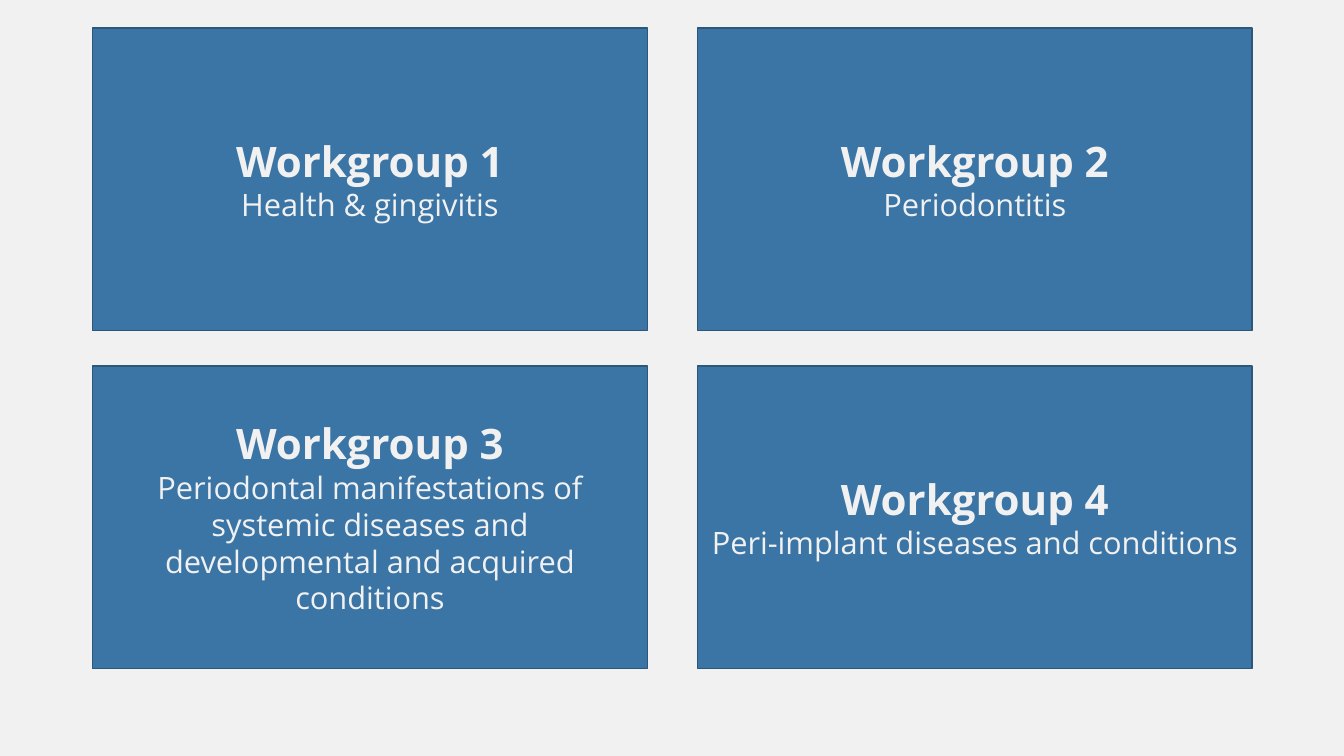
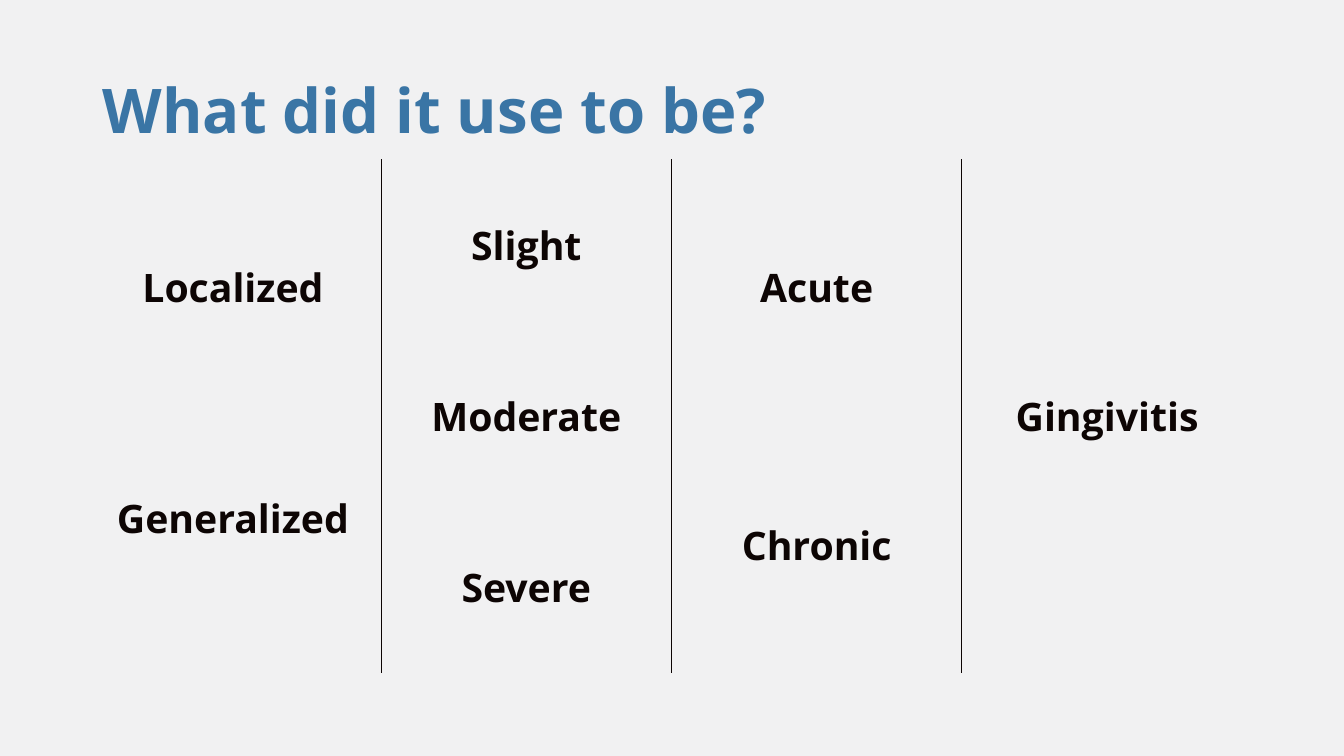
from lxml import etree
from pptx import Presentation
from pptx import util as u
from pptx.dml import color
from pptx.enum import shapes, text
from pptx.oxml import ns

COLOURS = {"paper": "F1F1F2", "blue": "3A75A5", "edge": "2B577A", "ink": "0D0504"}
FONT = "Open Sans"
WIDTH, HEIGHT = 13.33, 7.5
LEFT, CONTENT_WIDTH = 0.92, 11.5
NO_STYLE = "{2D5ABB26-0587-4C30-8999-92F81FD0307C}"

WORKGROUPS = [
    "Health & gingivitis",
    "Periodontitis",
    "Periodontal manifestations of systemic diseases and "
    "developmental and acquired conditions",
    "Peri-implant diseases and conditions",
]
TERM_COLUMNS = [
    [("Localized", 2), ("Generalized", 2)],
    [("Slight", 1), ("Moderate", 2), ("Severe", 1)],
    [("Acute", 2), ("Chronic", 2)],
    [("Gingivitis", 4)],
]


def rgb(name):
    return color.RGBColor.from_string(COLOURS[name])


def paint(fill, name):
    fill.solid()
    fill.fore_color.rgb = rgb(name)


def write(paragraph, content, size, colour, bold=True,
          align=text.PP_ALIGN.CENTER, spacing=None):
    paragraph.alignment = align
    if spacing:
        paragraph.line_spacing = spacing
    run = paragraph.add_run()
    run.text = content
    font = run.font
    font.name, font.size, font.bold = FONT, u.Pt(size), bold
    font.color.rgb = rgb(colour)


def add_card(slide, column, row, heading, detail):
    width, height = 5.5, 3
    column_gap, row_gap = 0.5, 0.35
    left = LEFT + column * (width + column_gap)
    top = 0.28 + row * (height + row_gap)
    shape = slide.shapes.add_shape(
        shapes.MSO_SHAPE.RECTANGLE,
        *map(u.Inches, (left, top, width, height)))
    shape.shadow.inherit = False
    paint(shape.fill, "blue")
    shape.line.color.rgb = rgb("edge")
    shape.line.width = u.Pt(1)
    frame = shape.text_frame
    frame.word_wrap = True
    frame.vertical_anchor = text.MSO_ANCHOR.MIDDLE
    write(frame.paragraphs[0], heading, 30, "paper")
    write(frame.add_paragraph(), detail, 22, "paper", bold=False)


def add_title(slide, content):
    title = slide.shapes.title
    title.left, title.top, title.width, title.height = map(
        u.Inches, (LEFT, 0.4, CONTENT_WIDTH, 1.45))
    title.text_frame.vertical_anchor = text.MSO_ANCHOR.MIDDLE
    write(title.text_frame.paragraphs[0], content, 44, "blue",
          align=text.PP_ALIGN.LEFT, spacing=0.9)


def add_border(cell, side):
    properties = cell._tc.get_or_add_tcPr()
    line = etree.SubElement(properties, ns.qn(f"a:ln{side}"), w=str(u.Pt(1)))
    fill = etree.SubElement(line, ns.qn("a:solidFill"))
    etree.SubElement(fill, ns.qn("a:srgbClr"), val=COLOURS["ink"])


def add_term_table(slide, columns):
    widths = [2.94] + [2.88] * 3
    heights = [1.7, 0.85, 0.85, 1.7]
    frame = slide.shapes.add_table(
        len(heights), len(widths),
        *map(u.Inches, (0.84, 1.58, sum(widths), sum(heights))))
    table = frame.table
    frame._element.find(".//" + ns.qn("a:tableStyleId")).text = NO_STYLE
    table.first_row = table.horz_banding = False
    for column, width in zip(table.columns, widths):
        column.width = u.Inches(width)
    for row, height in zip(table.rows, heights):
        row.height = u.Inches(height)

    last = len(widths) - 1
    for row in range(len(heights)):
        for column in range(len(widths)):
            cell = table.cell(row, column)
            if column > 0:
                add_border(cell, "L")
            if column < last:
                add_border(cell, "R")
            paint(cell.fill, "paper")
            cell.vertical_anchor = text.MSO_ANCHOR.MIDDLE

    for column, terms in enumerate(columns):
        row = 0
        for term, span in terms:
            cell = table.cell(row, column)
            if span > 1:
                cell.merge(table.cell(row + span - 1, column))
            write(cell.text_frame.paragraphs[0], term, 28, "ink")
            row += span
    table.cell(2, 0).margin_bottom = u.Inches(0.57)


def build_workgroups(presentation):
    slide = presentation.slides.add_slide(presentation.slide_layouts[6])
    for index, detail in enumerate(WORKGROUPS):
        row, column = divmod(index, 2)
        add_card(slide, column, row, f"Workgroup {index + 1}", detail)


def build_former_terms(presentation):
    slide = presentation.slides.add_slide(presentation.slide_layouts[5])
    add_title(slide, "What did it use to be?")
    add_term_table(slide, TERM_COLUMNS)


def main():
    presentation = Presentation()
    presentation.slide_width = u.Inches(WIDTH)
    presentation.slide_height = u.Inches(HEIGHT)
    paint(presentation.slide_master.background.fill, "paper")
    build_workgroups(presentation)
    build_former_terms(presentation)
    presentation.save("out.pptx")


if __name__ == "__main__":
    main()
